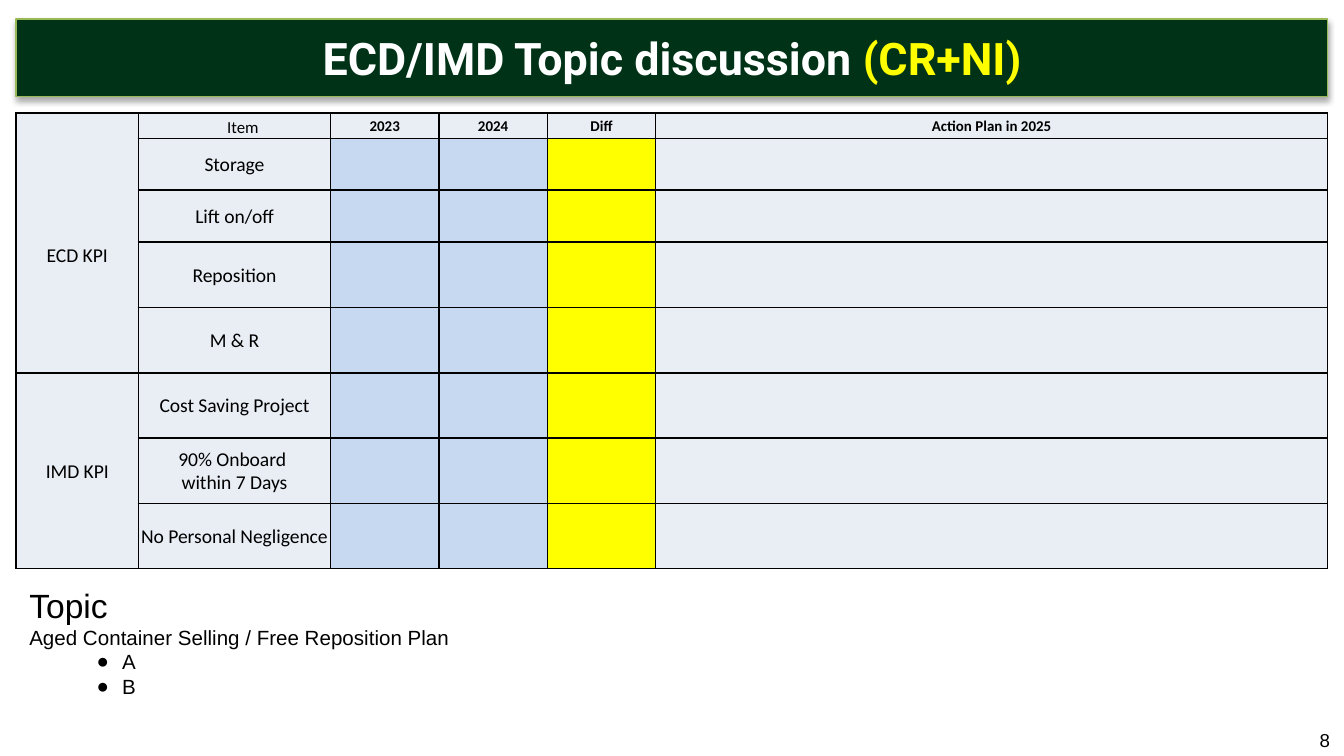
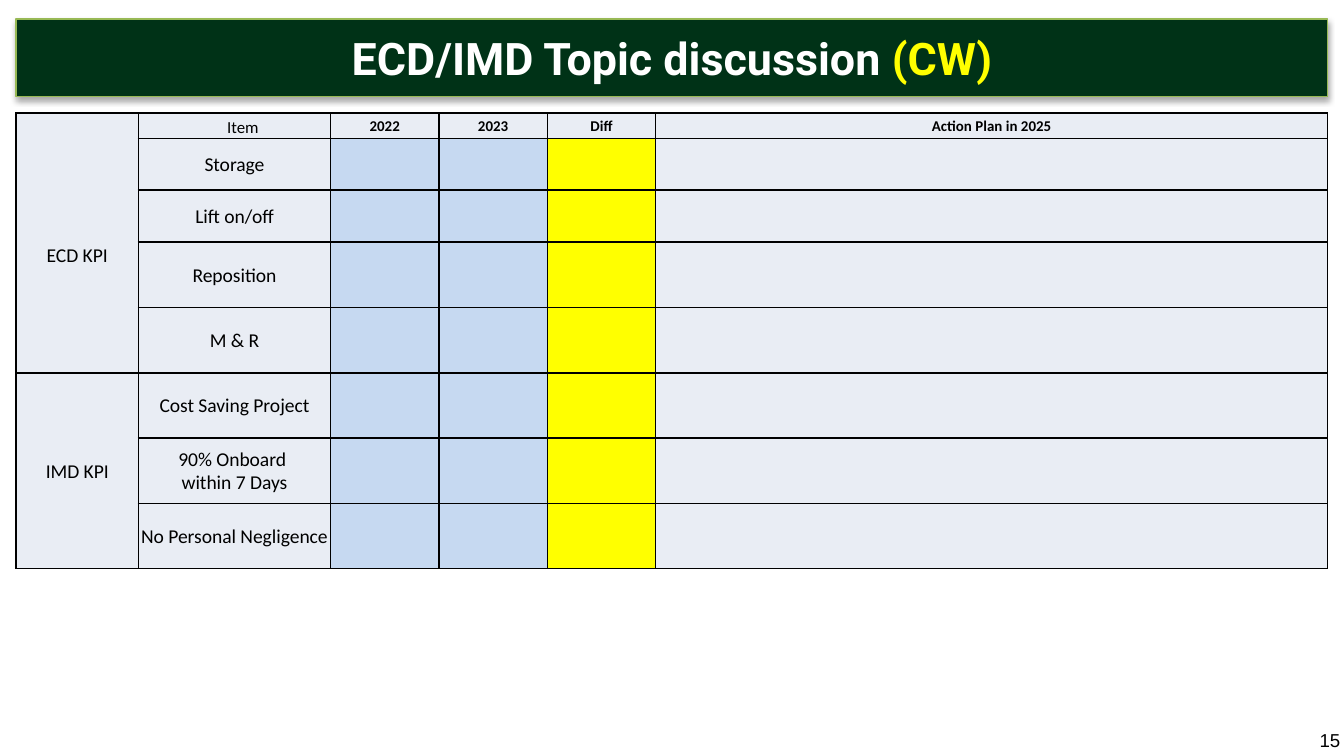
import lxml.etree
import pptx
import pptx.dml.color
import pptx.enum.text
import pptx.oxml
import pptx.oxml.ns
import pptx.util

Inches = pptx.util.Inches
Pt = pptx.util.Pt
RGBColor = pptx.dml.color.RGBColor
ALIGN = pptx.enum.text.PP_ALIGN
ANCHOR = pptx.enum.text.MSO_ANCHOR
qn = pptx.oxml.ns.qn

# Content
TITLE = "ECD/IMD Topic discussion "
SLIDES = [
    {
        "region": "(CR+NI)",
        "years": ["2023", "2024"],
        "number": "8",
        "topic": ("Topic", "Aged Container Selling / Free Reposition Plan", ["A", "B"]),
    },
    {"region": "(CW)", "years": ["2022", "2023"], "number": "15", "topic": None},
]
KPI_GROUPS = [
    ("ECD KPI", ["Storage", "Lift on/off", "Reposition", "M & R"]),
    ("IMD KPI", ["Cost Saving Project", "90% Onboard \nwithin 7 Days",
                 "No Personal Negligence"]),
]

# Shared look
BLACK = RGBColor(0x00, 0x00, 0x00)
WHITE = RGBColor(0xFF, 0xFF, 0xFF)
YELLOW = RGBColor(0xFF, 0xFF, 0x00)
DARK_GREEN = RGBColor(0x00, 0x32, 0x17)
LIGHT_GREEN = RGBColor(0x98, 0xB9, 0x55)
PALE_GREY = RGBColor(0xE9, 0xED, 0xF4)
PALE_BLUE = RGBColor(0xC6, 0xD9, 0xF1)

# The three figure columns and the five tall rows share what the others leave
LEFT, WIDTH, TABLE_HEIGHT = 0.12, 9.76, 3.37
GROUP_WIDTH, ITEM_WIDTH, PLAN_WIDTH = 0.91, 1.43, 5
FIGURE_WIDTH = (WIDTH - GROUP_WIDTH - ITEM_WIDTH - PLAN_WIDTH) / 3
COLUMN_WIDTHS = [GROUP_WIDTH, ITEM_WIDTH] + [FIGURE_WIDTH] * 3 + [PLAN_WIDTH]
TOP_ROWS = [0.17, 0.38, 0.39]
ROW_HEIGHTS = TOP_ROWS + [(TABLE_HEIGHT - sum(TOP_ROWS)) / 5] * 5
COLUMN_FILLS = [PALE_GREY, PALE_GREY, PALE_BLUE, PALE_BLUE, YELLOW, PALE_GREY]


def add_span(para, text, size, font, color=BLACK, bold=False):
    span = para.add_run()
    span.text = text
    span.font.size = Pt(size)
    span.font.name = font
    span.font.bold = bold
    span.font.color.rgb = color


def set_margins(target, left, top, right, bottom):
    target.margin_left, target.margin_top = Inches(left), Inches(top)
    target.margin_right, target.margin_bottom = Inches(right), Inches(bottom)


def add_shadow(shape):
    shape._element.spPr.append(pptx.oxml.parse_xml(
        f'<a:effectLst {pptx.oxml.ns.nsdecls("a")}>'
        f'<a:outerShdw blurRad="{Pt(3.1)}" dist="{Pt(1.8)}" dir="5400000" rotWithShape="0">'
        '<a:srgbClr val="000000"><a:alpha val="35000"/></a:srgbClr>'
        '</a:outerShdw></a:effectLst>'))


def add_title(page, region):
    band = page.shapes.title
    band.left, band.top = Inches(LEFT), Inches(0.14)
    band.width, band.height = Inches(WIDTH), Inches(0.58)
    band.fill.solid()
    band.fill.fore_color.rgb = DARK_GREEN
    band.line.color.rgb = LIGHT_GREEN
    band.line.width = Pt(0.75)
    add_shadow(band)
    frame = band.text_frame
    frame.auto_size = pptx.enum.text.MSO_AUTO_SIZE.NONE
    frame.vertical_anchor = ANCHOR.MIDDLE
    set_margins(frame, 0, 0, 0, 0)
    para = frame.paragraphs[0]
    para.alignment = ALIGN.CENTER
    add_span(para, TITLE, 24, "Roboto", WHITE, True)
    add_span(para, region, 24, "Roboto", YELLOW, True)


def add_borders(cell):
    properties = cell._tc.get_or_add_tcPr()
    for position, side in enumerate(("lnL", "lnR", "lnT", "lnB")):
        line = lxml.etree.Element(qn(f"a:{side}"), w=str(Pt(1)))
        fill = lxml.etree.SubElement(line, qn("a:solidFill"))
        lxml.etree.SubElement(fill, qn("a:srgbClr"), val=str(BLACK))
        properties.insert(position, line)


def write_cell(cell, text, size=10.5, bold=False):
    frame = cell.text_frame
    for index, line in enumerate(text.split("\n")):
        para = frame.add_paragraph() if index else frame.paragraphs[0]
        para.alignment = ALIGN.CENTER
        add_span(para, line, size, "Calibri", BLACK, bold)


def add_kpi_table(page, years):
    table = page.shapes.add_table(
        len(ROW_HEIGHTS), len(COLUMN_WIDTHS), Inches(LEFT), Inches(0.84),
        Inches(WIDTH), Inches(TABLE_HEIGHT)).table
    table.first_row = table.horz_banding = False
    for column, width in zip(table.columns, COLUMN_WIDTHS):
        column.width = Inches(width)

    # Grid, fills and borders
    for row_index, height in enumerate(ROW_HEIGHTS):
        table.rows[row_index].height = Inches(height)
        for column_index, color in enumerate(COLUMN_FILLS):
            cell = table.cell(row_index, column_index)
            cell.fill.solid()
            cell.fill.fore_color.rgb = color if row_index else PALE_GREY
            cell.vertical_anchor = ANCHOR.MIDDLE
            set_margins(cell, 0.01, 0.01, 0.01, 0)
            add_borders(cell)

    # Header row
    write_cell(table.cell(0, 1), "　Item", 9)
    for column_index, label in enumerate([*years, "Diff", "Action Plan in 2025"], 2):
        write_cell(table.cell(0, column_index), label, 8, True)

    # Groups: the first one also spans the header row
    first_row, item_row = 0, 1
    for group, items in KPI_GROUPS:
        for item in items:
            write_cell(table.cell(item_row, 1), item)
            item_row += 1
        group_cell = table.cell(first_row, 0)
        group_cell.merge(table.cell(item_row - 1, 0))
        write_cell(group_cell, group)
        if first_row == 0:
            group_cell.margin_top = Inches(0.19)
        first_row = item_row


def add_topic(page, heading, subject, points):
    box = page.shapes.add_textbox(Inches(LEFT), Inches(4.3), Inches(WIDTH), Inches(1.33))
    frame = box.text_frame
    frame.word_wrap = True
    add_span(frame.paragraphs[0], heading, 18, "Arial")
    add_span(frame.add_paragraph(), subject, 11, "Arial")
    for point in points:
        para = frame.add_paragraph()
        para.level = 1
        properties = para._p.get_or_add_pPr()
        properties.set("marL", str(Inches(0.69)))
        properties.set("indent", str(Inches(-0.19)))
        lxml.etree.SubElement(properties, qn("a:buFont"), typeface="Arial")
        lxml.etree.SubElement(properties, qn("a:buChar"), char="●")
        add_span(para, point, 11, "Arial")


def add_page_number(page, number):
    box = page.shapes.add_textbox(Inches(9.72), Inches(5.39), Inches(0.64), Inches(0.23))
    frame = box.text_frame
    frame.word_wrap = True
    frame.vertical_anchor = ANCHOR.MIDDLE
    add_span(frame.paragraphs[0], number, 10, "Arial")


def main():
    deck = pptx.Presentation()
    deck.slide_width = Inches(10)
    deck.slide_height = deck.slide_width * 9 // 16
    title_only = deck.slide_layouts[5]
    for content in SLIDES:
        page = deck.slides.add_slide(title_only)
        add_title(page, content["region"])
        add_kpi_table(page, content["years"])
        if content["topic"]:
            add_topic(page, *content["topic"])
        add_page_number(page, content["number"])
    deck.save("out.pptx")


if __name__ == "__main__":
    main()
